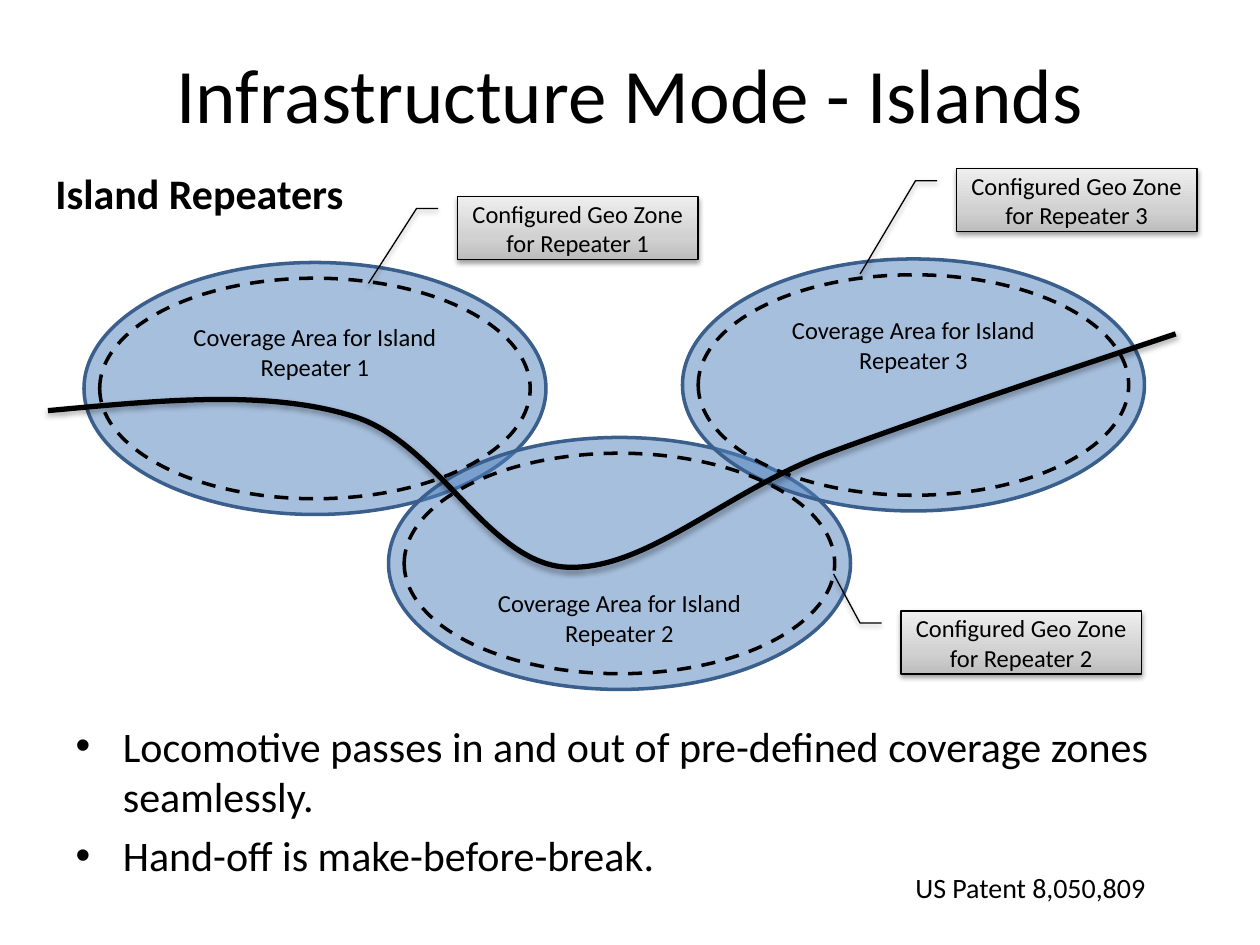
from copy import deepcopy
from dataclasses import dataclass
from lxml.etree import SubElement
from pptx import Presentation
from pptx.dml.color import RGBColor as RGB
from pptx.enum.dml import MSO_LINE
from pptx.enum.shapes import MSO_SHAPE as SHAPE
from pptx.enum.text import MSO_ANCHOR as ANCHOR, PP_ALIGN as ALIGN
from pptx.oxml.ns import qn
from pptx.util import Pt


@dataclass
class Theme:
    font: str = "Calibri"
    ink: RGB = RGB(0, 0, 0)
    zone: RGB = RGB(0x4F, 0x81, 0xBD)
    zone_line: RGB = RGB(0x3A, 0x5F, 0x8C)
    stops: tuple = ((0, "BDBDBD"), (0.35, "D1D1D1"), (1, "EEEEEE"))
    title: int = 44
    body: int = 24
    note: int = 16
    label: int = 14


theme = Theme()


def write(tf, lines, size, align=ALIGN.LEFT, bold=False):
    tf.word_wrap = True
    tf.text = "\n".join(lines)
    for p in tf.paragraphs:
        p.alignment = align
        p.font.name, p.font.size = theme.font, Pt(size)
        p.font.color.rgb, p.font.bold = theme.ink, bold


def add_shadow(sp, dist, alpha):
    sp.shadow.inherit = False
    effects = sp._element.spPr.find(qn("a:effectLst"))
    shadow = SubElement(effects, qn("a:outerShdw"), blurRad=str(Pt(3.1)),
                        dist=str(Pt(dist)), dir="5400000", rotWithShape="0")
    color = SubElement(shadow, qn("a:srgbClr"), val=str(theme.ink))
    SubElement(color, qn("a:alpha"), val=str(alpha * 1000))


prs = Presentation()
prs.slide_width, prs.slide_height = Pt(720), Pt(540)
s = prs.slides.add_slide(prs.slide_layouts[1])
title, body = s.placeholders

title.left, title.top, title.width, title.height = Pt(36), Pt(21.6), Pt(648), Pt(62.6)
write(title.text_frame, ["Infrastructure Mode - Islands"], theme.title, ALIGN.CENTER)
title.text_frame.vertical_anchor = ANCHOR.MIDDLE

body.left, body.top, body.width, body.height = Pt(36), Pt(408), Pt(648), Pt(102)
write(body.text_frame, [
    "Locomotive passes in and out of pre-defined coverage zones seamlessly.",
    "Hand-off is make-before-break.",
], theme.body)

islands = [(1, 48, 150, 0, 42), (2, 222, 250, 62, 0), (3, 390, 148, 0, 46)]
for number, x, y, pad_top, pad_bottom in islands:
    sp = s.shapes.add_shape(SHAPE.OVAL, Pt(x), Pt(y), Pt(264), Pt(144))
    sp.shadow.inherit = False
    sp.fill.solid()
    sp.fill.fore_color.rgb = theme.zone
    color = sp._element.spPr.find(qn("a:solidFill")).find(qn("a:srgbClr"))
    SubElement(color, qn("a:alpha"), val="50000")
    sp.line.color.rgb, sp.line.width = theme.zone_line, Pt(2)
    tf = sp.text_frame
    write(tf, [f"Coverage Area for Island Repeater {number}"], theme.label, ALIGN.CENTER)
    tf.vertical_anchor = ANCHOR.MIDDLE
    tf.margin_top, tf.margin_bottom = Pt(3.6 + pad_top), Pt(3.6 + pad_bottom)

track = [
    (27.4, 234.7),
    (89.3, 229), (151.9, 222.5), (200.9, 237.6),
    (249.8, 252), (277.2, 319.7), (321.8, 324),
    (367.2, 327.6), (412.6, 282.2), (470.9, 259.9),
    (529.2, 238.3), (600.5, 214.6), (671.8, 190.8),
]
points = [(Pt(x), Pt(y)) for x, y in track]
builder = s.shapes.build_freeform(*points[0])
builder.add_line_segments(points[1:], close=False)
sp = builder.convert_to_shape()
outline = next(sp._element.iter(qn("a:path")))
segments = outline.findall(qn("a:lnTo"))
for i in range(0, len(segments), 3):
    curve = SubElement(outline, qn("a:cubicBezTo"))
    for segment in segments[i:i + 3]:
        curve.append(segment[0])
        outline.remove(segment)
sp.fill.background()
sp.line.color.rgb, sp.line.width = theme.ink, Pt(3)
add_shadow(sp, 1.8, 35)

for number, x, y, *pads in islands:
    sp = s.shapes.add_shape(SHAPE.OVAL, Pt(x + 9), Pt(y + 9), Pt(246), Pt(126))
    sp.shadow.inherit = False
    sp.fill.background()
    sp.line.color.rgb, sp.line.width = theme.ink, Pt(2)
    sp.line.dash_style = MSO_LINE.DASH

for number, x, y, tip_y, tip_x in [
    (3, 546.5, 96.5, 1.67, -0.4),
    (2, 514.8, 349.2, -0.59, -0.28),
    (1, 261.4, 112.3, 1.38, -0.37),
]:
    sp = s.shapes.add_shape(SHAPE.LINE_CALLOUT_2, Pt(x), Pt(y), Pt(137.5), Pt(36))
    for i, value in enumerate((0.19, -0.08, 0.19, -0.17, tip_y, tip_x)):
        sp.adjustments[i] = value
    sp.fill.gradient()
    sp.fill.gradient_angle = 90
    first = next(sp._element.spPr.iter(qn("a:gs")))
    first.addnext(deepcopy(first))
    for stop, (position, shade) in zip(sp.fill.gradient_stops, theme.stops):
        stop.position = position
        stop.color.rgb = RGB.from_string(shade)
    sp.line.color.rgb, sp.line.width = theme.ink, Pt(0.75)
    add_shadow(sp, 1.6, 38)
    write(sp.text_frame, [f"Configured Geo Zone for Repeater {number}"], theme.label, ALIGN.CENTER)
    sp.text_frame.vertical_anchor = ANCHOR.MIDDLE

for text, x, y, w, h, size, align, bold in [
    ("US Patent 8,050,809", 516, 494, 156, 26.6, theme.note, ALIGN.LEFT, False),
    ("Island Repeaters", 18, 92, 192, 36, theme.body, ALIGN.CENTER, True),
]:
    box = s.shapes.add_textbox(Pt(x), Pt(y), Pt(w), Pt(h))
    write(box.text_frame, [text], size, align, bold)

prs.save("out.pptx")
